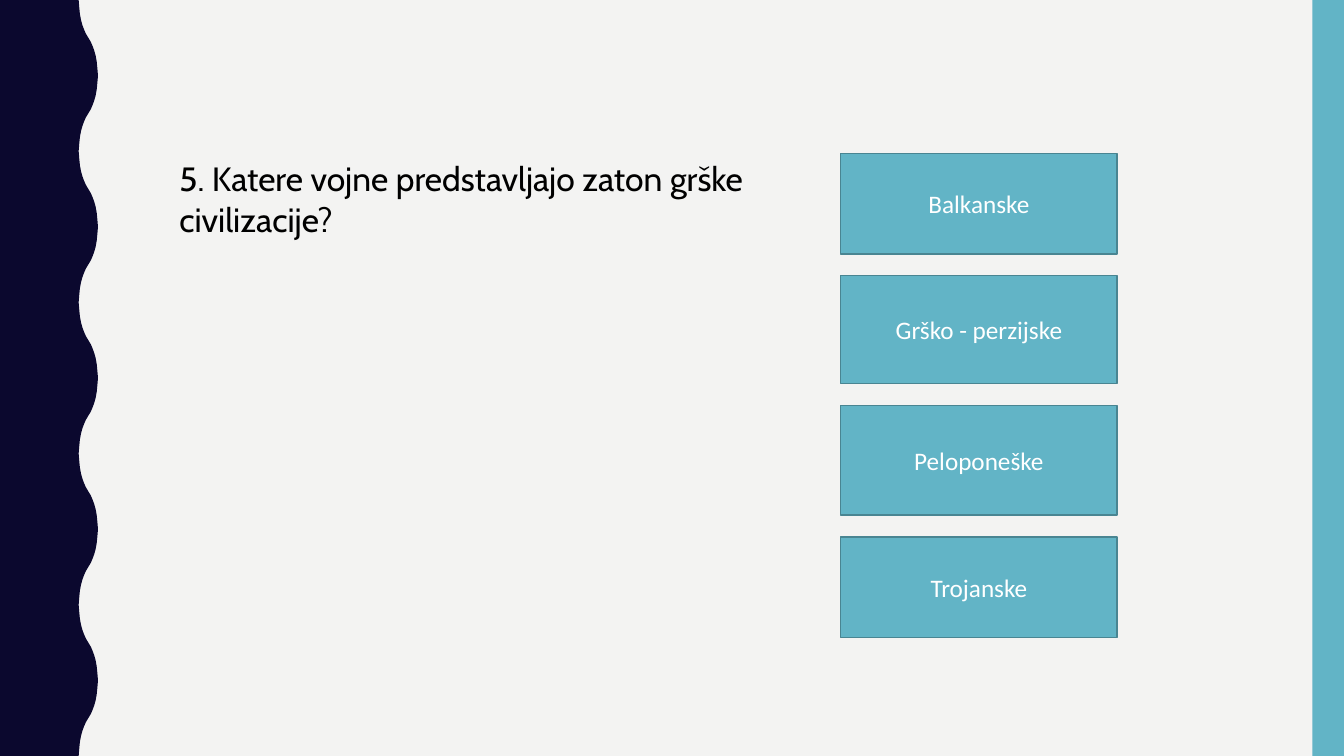
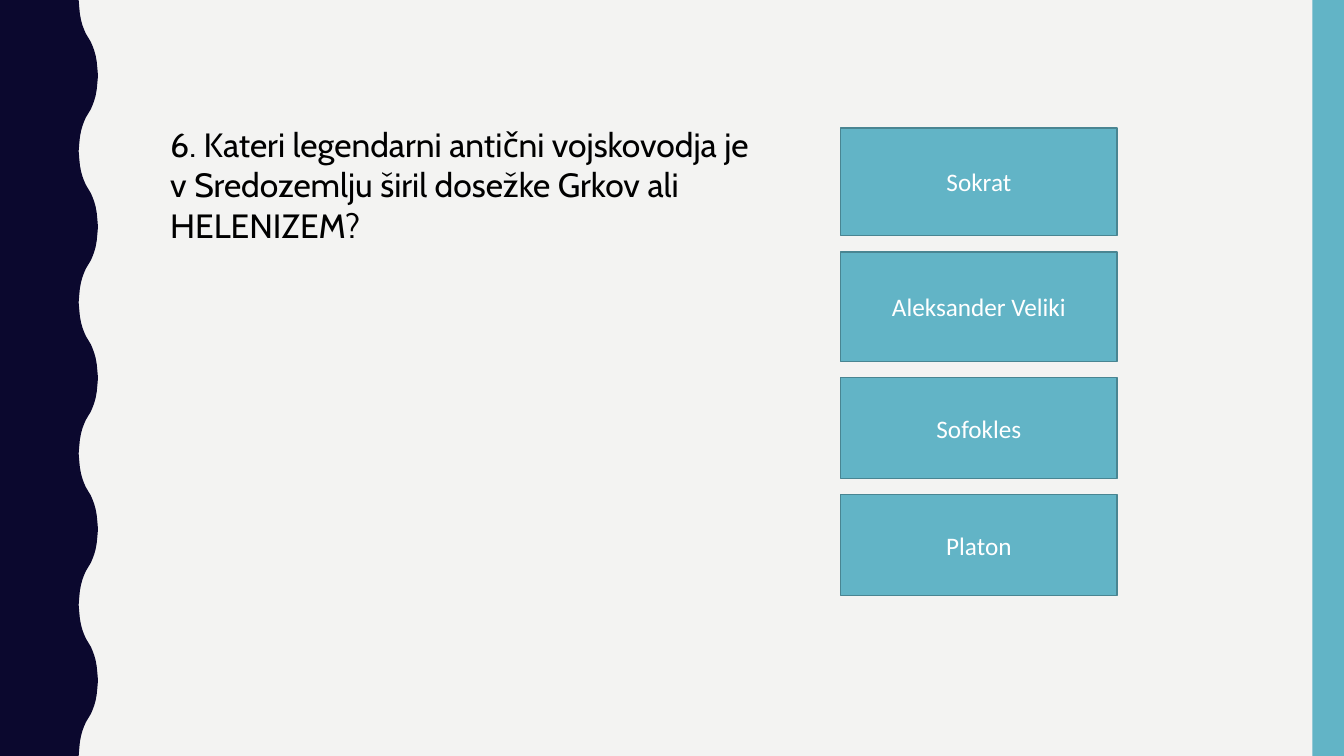
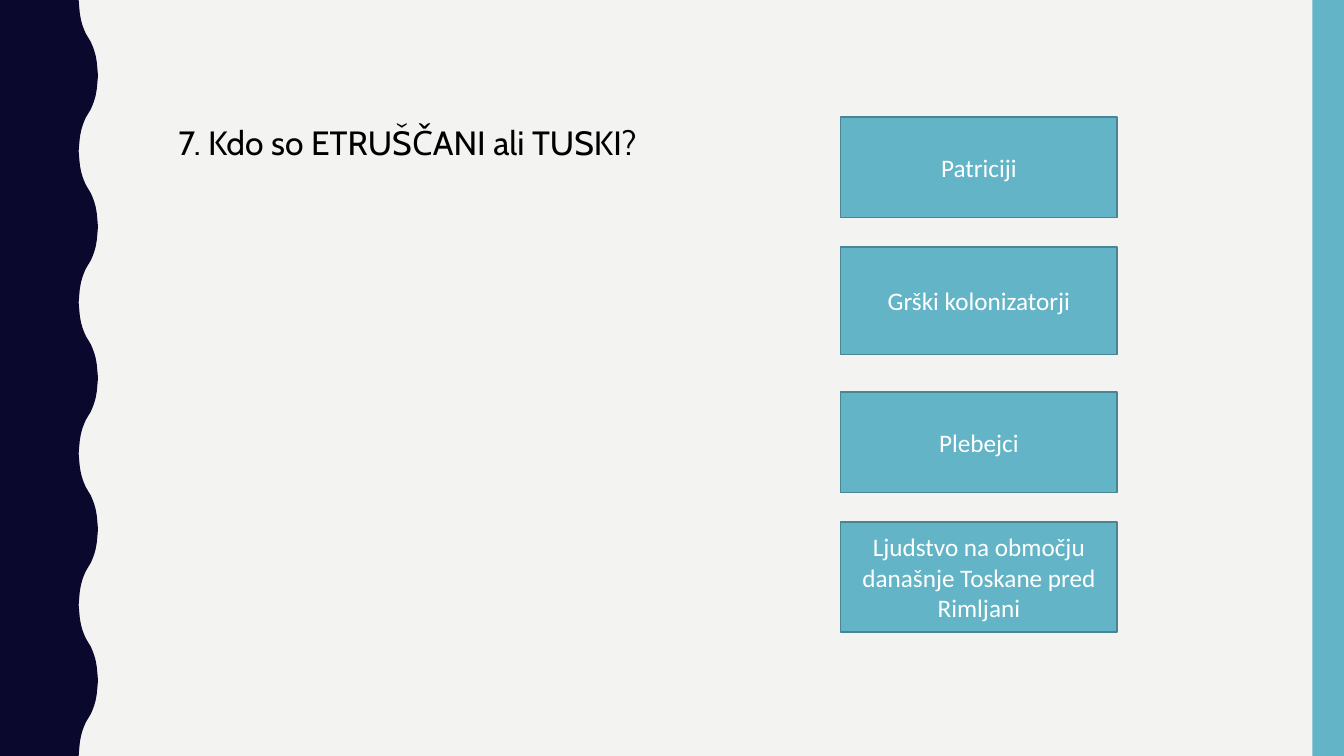
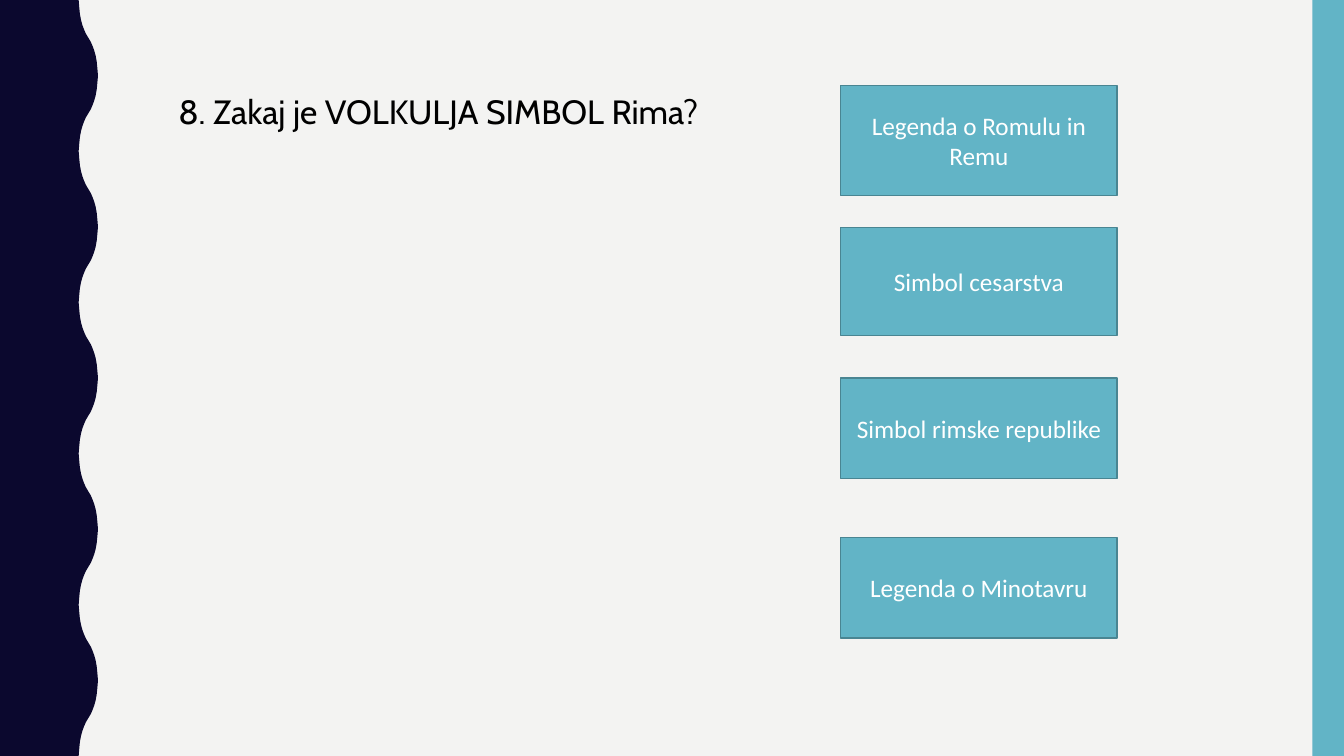
import pptx
import pptx.dml.color
import pptx.enum.shapes
import pptx.enum.text
import pptx.util

Pt = pptx.util.Pt
RGBColor = pptx.dml.color.RGBColor
RECTANGLE = pptx.enum.shapes.MSO_SHAPE.RECTANGLE

COLOURS = {
    "background": "F3F3F2",
    "wave": "0B082E",
    "accent": "62B4C6",
    "outline": "498592",
    "question": "000000",
    "answer": "FFFFFF",
}
QUESTION_FORMAT = {"name": "Cabin", "size": Pt(24)}
ANSWER_FORMAT = {"name": "Calibri", "size": Pt(18)}

SLIDE_WIDTH, SLIDE_HEIGHT = 960, 540
BAND_WIDTH = 22.5
QUESTION_WIDTH = 442
ANSWER_LEFT, ANSWER_WIDTH = 600.5, 197.5

# Wave edge: left limit, depth, length of one wave and a quarter of its outline
WAVE_LEFT, WAVE_DEPTH, WAVE_LENGTH, WAVE_COUNT = 56.2, 13.8, 108, 5
QUARTER_WAVE = [(0, 0), (0.4, 5), (0.9, 10), (1.7, 14.4), (2.7, 18),
                (3.8, 21), (5.1, 24), (6.9, 27)]

# Each answer is its text and box height; gaps are those between the boxes
QUIZ = [
    {
        "question": "5. Katere vojne predstavljajo zaton grške civilizacije?",
        "question_box": (121, 109.5, 65.5),
        "top": 109.5,
        "gaps": [15.5] * 3,
        "answers": [("Balkanske", 72), ("Grško - perzijske", 77),
                    ("Peloponeške", 78.5), ("Trojanske", 72)],
    },
    {
        "question": "6. Kateri legendarni antični vojskovodja je v Sredozemlju "
                    "širil dosežke Grkov ali HELENIZEM?",
        "question_box": (114.5, 85, 94.5),
        "top": 91.4,
        "gaps": [11.5] * 3,
        "answers": [("Sokrat", 77), ("Aleksander Veliki", 78.5),
                    ("Sofokles", 72), ("Platon", 72)],
    },
    {
        "question": "7. Kdo so ETRUŠČANI ali TUSKI?",
        "question_box": (120.25, 83.5, 36),
        "top": 83.5,
        "gaps": [20.9, 26.6, 20.9],
        "answers": [("Patriciji", 72), ("Grški kolonizatorji", 77), ("Plebejci", 72),
                    ("Ljudstvo na območju današnje Toskane pred Rimljani", 78.5)],
    },
    {
        "question": "8. Zakaj je VOLKULJA SIMBOL Rima?",
        "question_box": (120.25, 61.2, 36),
        "top": 61.2,
        "gaps": [23, 30.3, 41.8],
        "answers": [("Legenda o Romulu in Remu", 78.5), ("Simbol cesarstva", 77),
                    ("Simbol rimske republike", 72), ("Legenda o Minotavru", 72)],
    },
]


def colour(name):
    return RGBColor.from_string(COLOURS[name])


def paint(shape, fill, line=None):
    shape.shadow.inherit = False
    shape.fill.solid()
    shape.fill.fore_color.rgb = colour(fill)
    if line:
        shape.line.color.rgb = colour(line)
        shape.line.width = Pt(1)
    else:
        shape.line.fill.background()


def write(text_frame, text, text_format, colour_name):
    text_frame.word_wrap = True
    paragraph = text_frame.paragraphs[0]
    run = paragraph.add_run()
    run.text = text
    for attribute, value in text_format.items():
        setattr(run.font, attribute, value)
    run.font.color.rgb = colour(colour_name)
    return paragraph


def wave_points():
    """Outline of the wavy edge, mirrored out of a quarter wave."""
    rise = QUARTER_WAVE + [(WAVE_DEPTH - x, WAVE_LENGTH / 2 - y)
                           for x, y in reversed(QUARTER_WAVE[:-1])]
    wave = rise + [(x, WAVE_LENGTH - y) for x, y in reversed(rise[:-1])]
    return [(Pt(WAVE_LEFT + x), Pt(y + number * WAVE_LENGTH))
            for number in range(WAVE_COUNT) for x, y in wave]


def decorate_layout(layout, slide):
    """Draw the shared bands, then hand them over to the layout."""
    for placeholder in list(layout.placeholders):
        layout.shapes.element.remove(placeholder.element)

    # Wavy band on the left
    builder = slide.shapes.build_freeform(0, 0)
    builder.add_line_segments(wave_points() + [(0, Pt(SLIDE_HEIGHT))], close=True)
    wave = builder.convert_to_shape()
    paint(wave, "wave")

    # Straight band on the right
    band = slide.shapes.add_shape(RECTANGLE, Pt(SLIDE_WIDTH - BAND_WIDTH), 0,
                                  Pt(BAND_WIDTH), Pt(SLIDE_HEIGHT))
    paint(band, "accent")

    for shape in (wave, band):
        layout.shapes.element.append(shape.element)


def add_answers(slide, left, top, width, answers, gaps):
    for (text, height), gap in zip(answers, gaps + [0]):
        box = slide.shapes.add_shape(RECTANGLE, Pt(left), Pt(top), Pt(width), Pt(height))
        paint(box, "accent", "outline")
        box.text_frame.vertical_anchor = pptx.enum.text.MSO_ANCHOR.MIDDLE
        paragraph = write(box.text_frame, text, ANSWER_FORMAT, "answer")
        paragraph.alignment = pptx.enum.text.PP_ALIGN.CENTER
        top += height + gap


def add_question(slide, left, top, width, height, text):
    box = slide.shapes.add_textbox(Pt(left), Pt(top), Pt(width), Pt(height))
    write(box.text_frame, text, QUESTION_FORMAT, "question")
    box.text_frame.auto_size = pptx.enum.text.MSO_AUTO_SIZE.SHAPE_TO_FIT_TEXT


def fill_quiz_slide(slide, quiz):
    left, top, height = quiz["question_box"]
    add_question(slide, left, top, QUESTION_WIDTH, height, quiz["question"])
    add_answers(slide, ANSWER_LEFT, quiz["top"], ANSWER_WIDTH,
                quiz["answers"], quiz["gaps"])


def main():
    presentation = pptx.Presentation()
    presentation.slide_width = Pt(SLIDE_WIDTH)
    presentation.slide_height = Pt(SLIDE_HEIGHT)
    background = presentation.slide_master.background.fill
    background.solid()
    background.fore_color.rgb = colour("background")

    layout = presentation.slide_layouts[6]
    slides = [presentation.slides.add_slide(layout) for _ in QUIZ]
    decorate_layout(layout, slides[0])
    for slide, quiz in zip(slides, QUIZ):
        fill_quiz_slide(slide, quiz)
    presentation.save("out.pptx")


if __name__ == "__main__":
    main()
